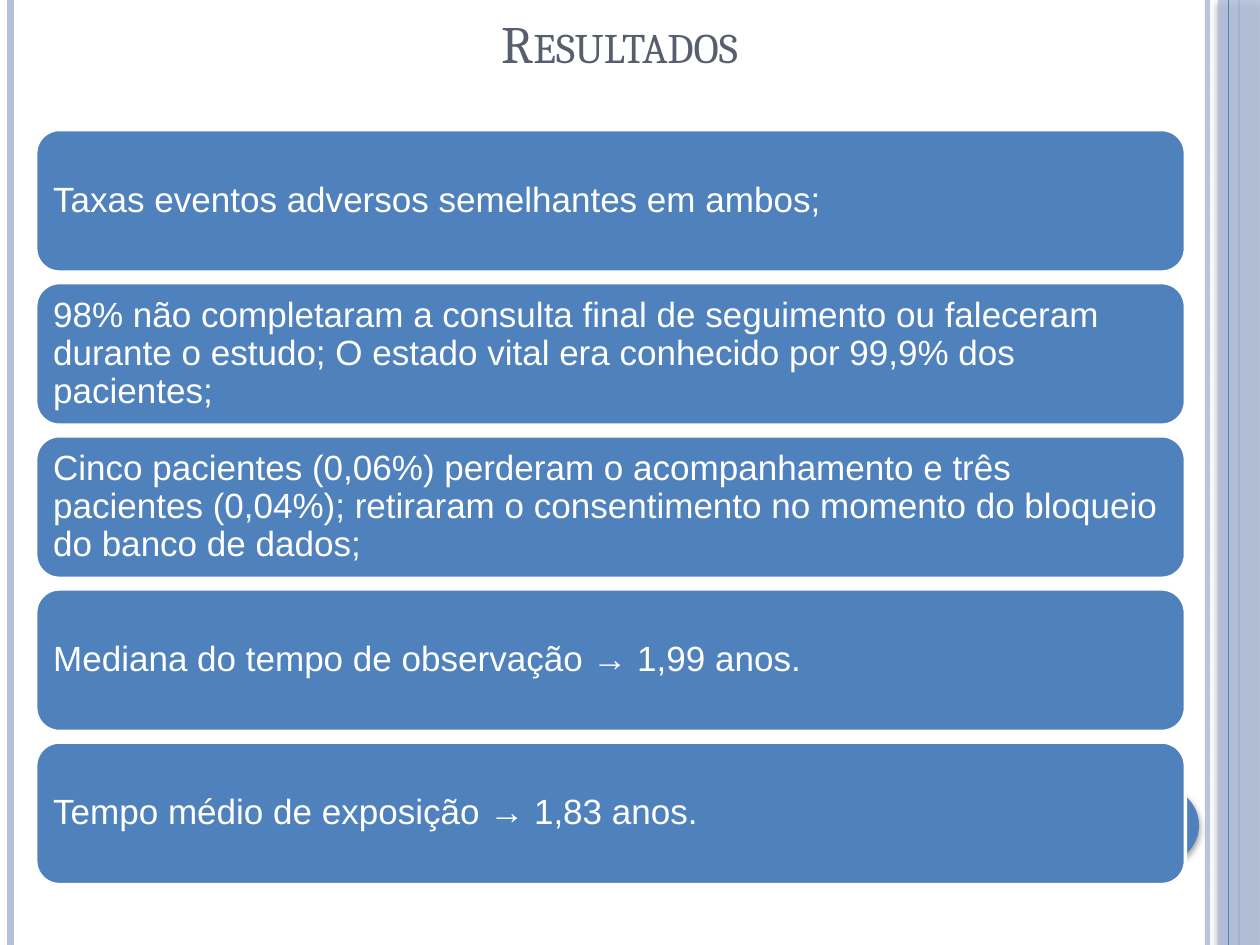
from dataclasses import dataclass

from lxml.etree import SubElement
from pptx import Presentation
from pptx.dml.color import RGBColor as Rgb
from pptx.enum.shapes import MSO_CONNECTOR as Connector, MSO_SHAPE as Preset
from pptx.enum.text import MSO_ANCHOR as Anchor, PP_ALIGN as Align
from pptx.oxml.ns import qn
from pptx.shapes.base import BaseShape
from pptx.slide import Slide
from pptx.text.text import TextFrame
from pptx.util import Pt


@dataclass(frozen=True)
class Theme:
    blue: str = "4F81BD"
    pale: str = "B3C1DB"
    white: str = "FFFFFF"
    slate: str = "575F6D"
    black: str = "000000"
    title_font: str = "Cambria"
    body_font: str = "Arial"
    title_size: float = 30
    body_size: float = 20
    line_spacing: float = 0.9


@dataclass(frozen=True)
class Rail:
    x: float
    color: str
    weight: float
    opacity: int = 100


@dataclass(frozen=True)
class Ornament:
    preset: Preset
    left: float
    top: float
    width: float
    height: float
    color: str
    opacity: int = 100


THEME = Theme()
SLIDE_WIDTH, SLIDE_HEIGHT = 720, 540
CARD_LEFT, CARD_TOP, CARD_WIDTH, CARD_HEIGHT = 20.4, 74, 657, 81.5
CARD_PITCH, CARD_INSET = 87.5, 6

OUTER_RAILS = (
    Rail(690, THEME.pale, 3, 93),
    Rail(6, THEME.pale, 4.5),
    Rail(708, THEME.blue, 1.5),
)
SIDE_BAND = Ornament(Preset.RECTANGLE, 696, 0, 24, SLIDE_HEIGHT, THEME.pale, 87)
INNER_RAIL = Rail(702, THEME.blue, 0.75)
PAGE_DISC = Ornament(Preset.OVAL, 642, 450, 43.2, 43.2, THEME.blue)

RESULTS = (
    "Taxas eventos adversos semelhantes em ambos;",
    "98% não completaram a consulta final de seguimento ou faleceram durante o estudo; "
    "O estado vital era conhecido por 99,9% dos pacientes;",
    "Cinco pacientes (0,06%) perderam o acompanhamento e três pacientes (0,04%); "
    "retiraram o consentimento no momento do bloqueio do banco de dados;",
    "Mediana do tempo de observação → 1,99 anos.",
    "Tempo médio de exposição → 1,83 anos.",
)


def set_opacity(shape: BaseShape, percent: int) -> None:
    """Make the first colour of a shape partly transparent."""
    if percent < 100:
        color = next(shape._element.spPr.iter(qn("a:srgbClr")))
        SubElement(color, qn("a:alpha"), val=str(percent * 1000))


def add_shadow(shape: BaseShape) -> None:
    """Give a shape a soft shadow that falls straight down."""
    effects = SubElement(shape._element.spPr, qn("a:effectLst"))
    shadow = SubElement(effects, qn("a:outerShdw"), blurRad=str(Pt(4)),
                        dist=str(Pt(2)), dir="5400000", rotWithShape="0")
    color = SubElement(shadow, qn("a:srgbClr"), val=THEME.black)
    SubElement(color, qn("a:alpha"), val="40000")


def add_rail(page: Slide, rail: Rail) -> None:
    """Draw a vertical line over the full height of the slide."""
    line = page.shapes.add_connector(
        Connector.STRAIGHT, Pt(rail.x), Pt(0), Pt(rail.x), Pt(SLIDE_HEIGHT))
    line.line.color.rgb = Rgb.from_string(rail.color)
    line.line.width = Pt(rail.weight)
    set_opacity(line, rail.opacity)
    SubElement(line._element.spPr, qn("a:effectLst"))


def add_ornament(page: Slide, ornament: Ornament) -> None:
    """Draw a borderless decorative shape with a shadow."""
    shape = page.shapes.add_shape(
        ornament.preset, Pt(ornament.left), Pt(ornament.top),
        Pt(ornament.width), Pt(ornament.height))
    shape.fill.solid()
    shape.fill.fore_color.rgb = Rgb.from_string(ornament.color)
    shape.line.fill.background()
    set_opacity(shape, ornament.opacity)
    add_shadow(shape)


def write(frame: TextFrame, text: str, font: str, size: float, color: str,
          align: Align, inset: float) -> None:
    """Fill a text frame with one vertically centred paragraph."""
    frame.word_wrap = True
    frame.vertical_anchor = Anchor.MIDDLE
    frame.margin_left = frame.margin_right = Pt(inset)
    frame.margin_top = frame.margin_bottom = Pt(inset)
    para = frame.paragraphs[0]
    para.text = text
    para.alignment = align
    para.line_spacing = THEME.line_spacing
    para.font.name = font
    para.font.size = Pt(size)
    para.font.color.rgb = Rgb.from_string(color)


def add_title(page: Slide, text: str) -> None:
    """Write the slide heading in small capitals."""
    box = page.shapes.add_textbox(Pt(60), Pt(3.6), Pt(588), Pt(46))
    write(box.text_frame, text, THEME.title_font, THEME.title_size,
          THEME.slate, Align.CENTER, 0)
    properties = box.text_frame.paragraphs[0]._p.get_or_add_pPr()
    properties.find(qn("a:defRPr")).set("cap", "small")


def add_card(page: Slide, index: int, text: str) -> None:
    """Draw one result as a rounded card in the stack."""
    card = page.shapes.add_shape(
        Preset.ROUNDED_RECTANGLE, Pt(CARD_LEFT), Pt(CARD_TOP + index * CARD_PITCH),
        Pt(CARD_WIDTH), Pt(CARD_HEIGHT))
    card.shadow.inherit = False
    card.fill.solid()
    card.fill.fore_color.rgb = Rgb.from_string(THEME.blue)
    card.line.color.rgb = Rgb.from_string(THEME.white)
    card.line.width = Pt(2)
    write(card.text_frame, text, THEME.body_font, THEME.body_size,
          THEME.white, Align.LEFT, CARD_INSET)


def main() -> None:
    """Build the results slide and save it."""
    deck = Presentation()
    deck.slide_width, deck.slide_height = Pt(SLIDE_WIDTH), Pt(SLIDE_HEIGHT)
    page = deck.slides.add_slide(deck.slide_layouts[6])
    for rail in OUTER_RAILS:
        add_rail(page, rail)
    add_ornament(page, SIDE_BAND)
    add_rail(page, INNER_RAIL)
    add_ornament(page, PAGE_DISC)
    add_title(page, "Resultados")
    for index, text in enumerate(RESULTS):
        add_card(page, index, text)
    deck.save("out.pptx")


if __name__ == "__main__":
    main()
